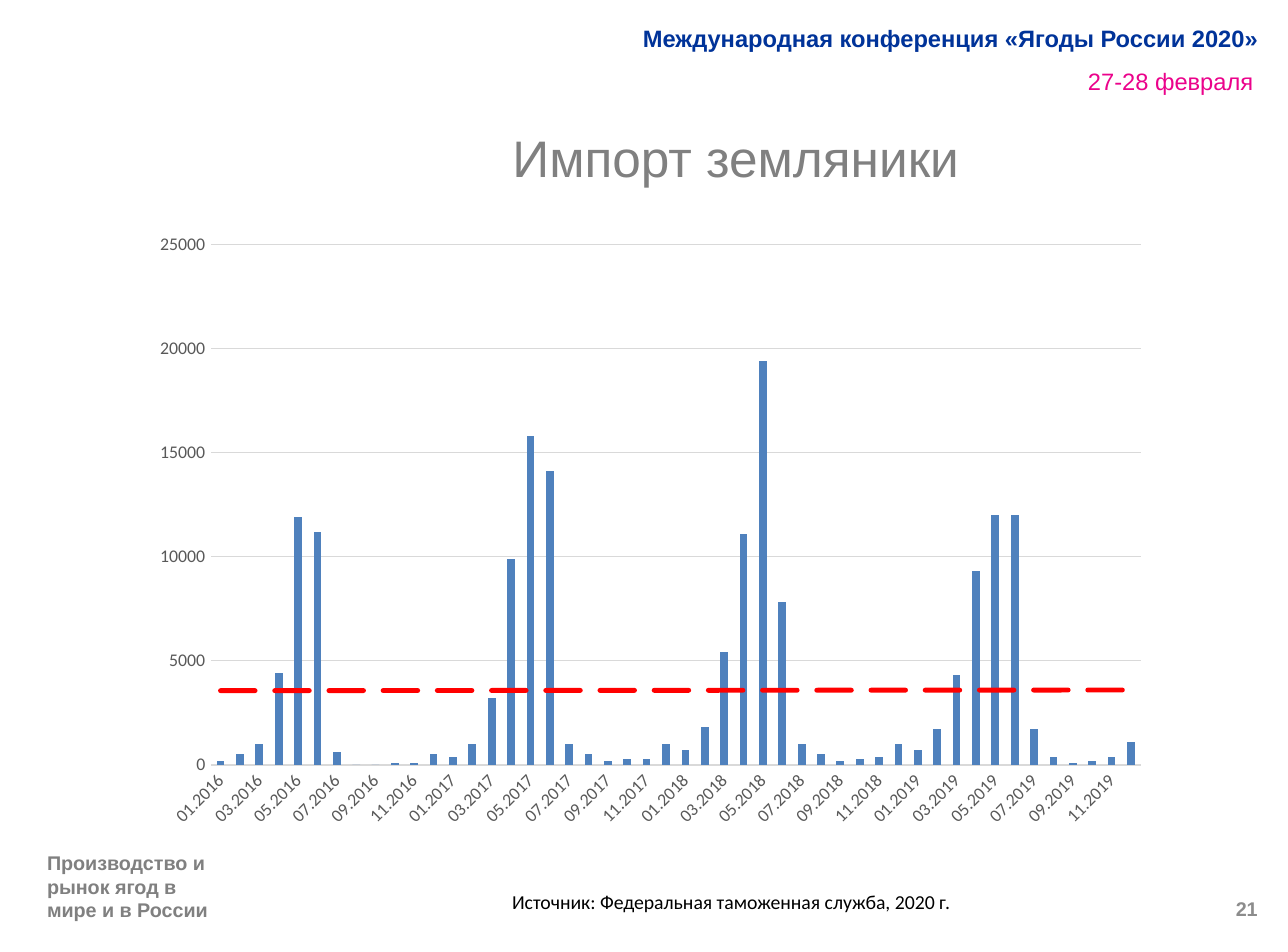
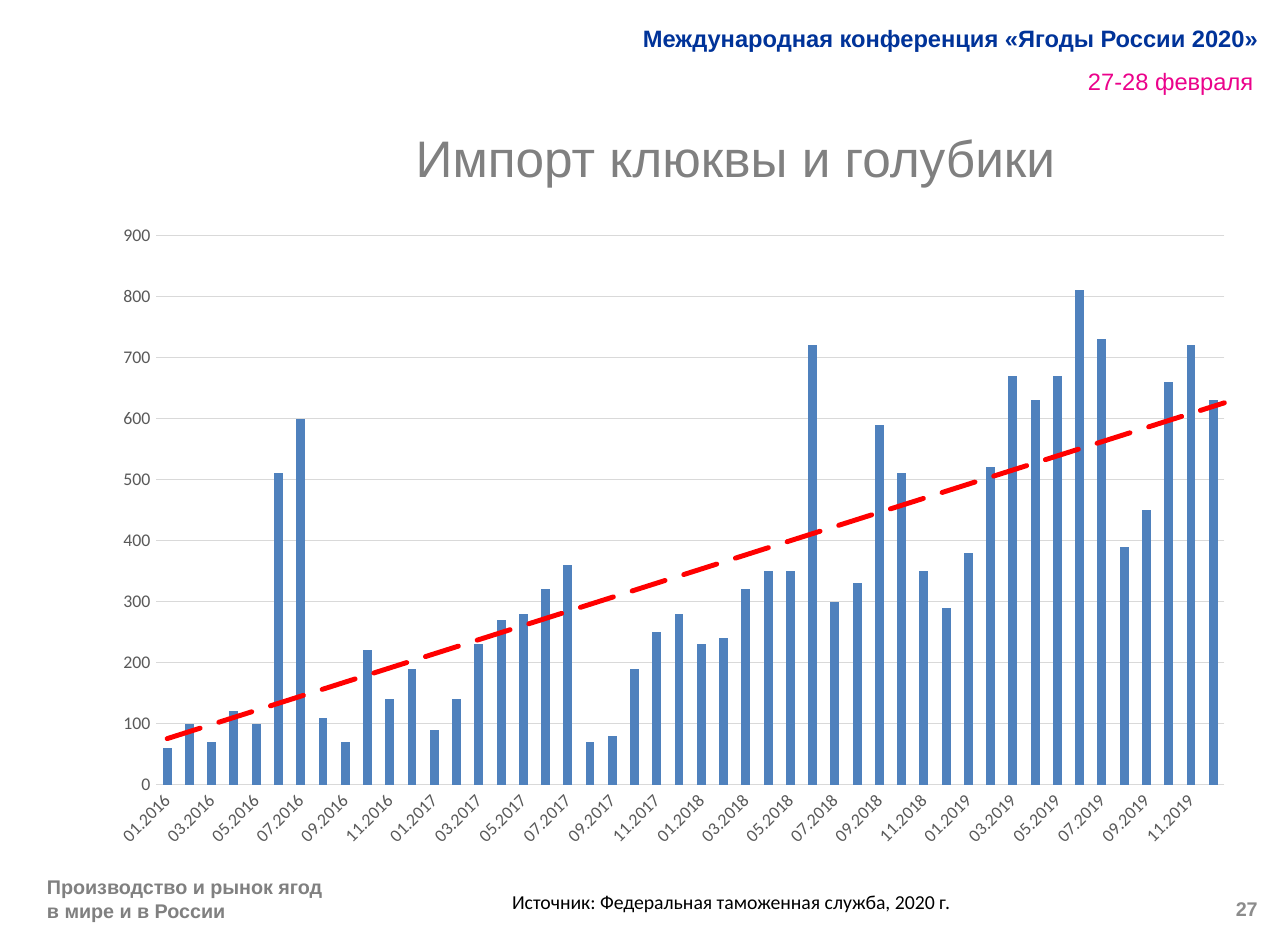
from dataclasses import dataclass

import pptx
import pptx.chart.axis
import pptx.chart.data
import pptx.dml.color
import pptx.dml.line
import pptx.enum.chart
import pptx.enum.text
import pptx.oxml
import pptx.oxml.ns
import pptx.slide
import pptx.util

WIDE, HIGH = pptx.util.Cm(23), pptx.util.Cm(17)

HUES = {
    "navy": "003399", "pink": "EB028B", "gray": "808080", "page": "8C8C8C",
    "ink": "000000", "axis": "595959", "grid": "D9D9D9", "bar": "4F81BD",
    "trend": "FF0000",
}
LEFT, MID, RIGHT = (pptx.enum.text.PP_ALIGN.LEFT, pptx.enum.text.PP_ALIGN.CENTER,
                    pptx.enum.text.PP_ALIGN.RIGHT)
TOP, CENTRE = pptx.enum.text.MSO_ANCHOR.TOP, pptx.enum.text.MSO_ANCHOR.MIDDLE

MONTHS = [f"{month:02}.{year}" for year in range(2016, 2020) for month in range(1, 13)]


@dataclass(frozen=True)
class Box:
    """Left, top, width and height in percent of the slide."""
    x: float
    y: float
    w: float
    h: float

    def place(self) -> list[int]:
        sides = ((self.x, WIDE), (self.y, HIGH), (self.w, WIDE), (self.h, HIGH))
        return [round(share * full / 100) for share, full in sides]


@dataclass(frozen=True)
class Style:
    size: float
    hue: str
    bold: bool = False
    face: str = "Arial"
    align: int = LEFT
    anchor: int = CENTRE
    inset: tuple[float, float] = (0.08, 0.04)
    pitch: float | None = None


@dataclass(frozen=True)
class Page:
    title: str
    number: int
    chart: Box
    topic: Box
    peak: int
    step: int
    data: list[int]


# Text styles
DATE = Style(12, "pink", align=RIGHT, anchor=TOP, pitch=20.4)
EVENT = Style(12, "navy", True, align=RIGHT)
TITLE = Style(26, "gray", align=MID)
COUNT = Style(10, "page", True, align=RIGHT)
TOPIC = Style(10, "gray", True)
SOURCE = Style(10, "ink", face="Calibri", anchor=TOP, inset=(0.1, 0.05))

# Texts that stand on every slide
FRAME = [
    ("27-28 февраля", Box(80.42, 5.23, 17.78, 5.53), DATE),
    ("Международная конференция «Ягоды России 2020»",
     Box(46.71, 1.05, 51.9, 5.83), EVENT),
    ("Источник: Федеральная таможенная служба, 2020 г.",
     Box(38.68, 92.7, 53.01, 4.03), SOURCE),
]
THEME = "Производство и рынок ягод в мире и в России"
TITLE_BOX = Box(16.12, 10.65, 82.05, 11.65)
COUNT_BOX = Box(75.22, 92.7, 23.3, 5.38)

PAGES = [
    Page("Импорт земляники", 21, Box(10.85, 23.28, 79.29, 64.84),
         Box(2.77, 87.72, 15.9, 10.76), 25000, 5000,
         [200, 500, 1000, 4400, 11900, 11200, 600, 0, 0, 100, 100, 500,
          400, 1000, 3200, 9900, 15800, 14100, 1000, 500, 200, 300, 300, 1000,
          700, 1800, 5400, 11100, 19400, 7800, 1000, 500, 200, 300, 400, 1000,
          700, 1700, 4300, 9300, 12000, 12000, 1700, 400, 100, 200, 400, 1100]),
    Page("Импорт клюквы и голубики", 27, Box(7.4, 22.29, 89.45, 67.98),
         Box(2.77, 90.33, 23.74, 8.07), 900, 100,
         [60, 100, 70, 120, 100, 510, 600, 110, 70, 220, 140, 190,
          90, 140, 230, 270, 280, 320, 360, 70, 80, 190, 250, 280,
          230, 240, 320, 350, 350, 720, 300, 330, 590, 510, 350, 290,
          380, 520, 670, 630, 670, 810, 730, 390, 450, 660, 720, 630]),
]


def paint(name: str) -> pptx.dml.color.RGBColor:
    return pptx.dml.color.RGBColor.from_string(HUES[name])


def apply(item: object, **form: object) -> None:
    for key, value in form.items():
        setattr(item, key, value)


def write(slide: pptx.slide.Slide, text: str, box: Box, style: Style) -> None:
    frame = slide.shapes.add_textbox(*box.place()).text_frame
    side, edge = map(pptx.util.Inches, style.inset)
    apply(frame, word_wrap=True, vertical_anchor=style.anchor, margin_left=side,
          margin_right=side, margin_top=edge, margin_bottom=edge)
    line = frame.paragraphs[0]
    line.alignment = style.align
    if style.pitch:
        line.line_spacing = pptx.util.Pt(style.pitch)
    run = line.add_run()
    run.text = text
    apply(run.font, size=pptx.util.Pt(style.size), bold=style.bold, name=style.face)
    run.font.color.rgb = paint(style.hue)


def trim(axis: pptx.chart.axis.CategoryAxis | pptx.chart.axis.ValueAxis) -> None:
    """Give an axis its labels and remove its ticks."""
    none = pptx.enum.chart.XL_TICK_MARK.NONE
    apply(axis, major_tick_mark=none, minor_tick_mark=none)
    font = axis.tick_labels.font
    apply(font, size=pptx.util.Pt(9), name="Calibri", bold=False)
    font.color.rgb = paint("axis")


def rule(line: pptx.dml.line.LineFormat) -> None:
    line.color.rgb = paint("grid")
    line.width = pptx.util.Pt(0.75)


def plot(slide: pptx.slide.Slide, page: Page) -> None:
    data = pptx.chart.data.CategoryChartData()
    data.categories = MONTHS
    data.add_series("Series 1", page.data)
    kind = pptx.enum.chart.XL_CHART_TYPE.COLUMN_CLUSTERED
    chart = slide.shapes.add_chart(kind, *page.chart.place(), data).chart
    apply(chart, has_legend=False, has_title=False)
    apply(chart.font, size=pptx.util.Pt(10), name="Calibri")
    chart.font.color.rgb = paint("ink")

    # Columns
    bars = chart.plots[0]
    apply(bars, gap_width=150, vary_by_categories=False)
    series = bars.series[0]
    series.format.fill.solid()
    series.format.fill.fore_color.rgb = paint("bar")

    # Axes
    months, scale = chart.category_axis, chart.value_axis
    for axis in (months, scale):
        trim(axis)
    rule(months.format.line)
    months._element.xpath("./c:txPr/a:bodyPr")[0].set("rot", "-2700000")
    apply(scale, minimum_scale=0, maximum_scale=page.peak, major_unit=page.step)
    scale.format.line.fill.background()
    rule(scale.major_gridlines.format.line)

    # Dashed trend line, half a month past the last column
    trend = pptx.oxml.parse_xml(
        f'<c:trendline {pptx.oxml.ns.nsdecls("c", "a")}><c:spPr>'
        f'<a:ln w="{pptx.util.Pt(2.5)}" cap="rnd"><a:solidFill>'
        f'<a:srgbClr val="{HUES["trend"]}"/></a:solidFill>'
        '<a:prstDash val="lgDash"/></a:ln></c:spPr>'
        '<c:trendlineType val="linear"/><c:forward val="0.5"/>'
        '<c:dispRSqr val="0"/><c:dispEq val="0"/></c:trendline>')
    series._element.xpath("./c:cat")[0].addprevious(trend)


def main() -> None:
    deck = pptx.Presentation()
    deck.slide_width = WIDE
    deck.slide_height = HIGH
    for page in PAGES:
        slide = deck.slides.add_slide(deck.slide_layouts[6])
        for text, box, style in FRAME:
            write(slide, text, box, style)
        write(slide, page.title, TITLE_BOX, TITLE)
        write(slide, str(page.number), COUNT_BOX, COUNT)
        plot(slide, page)
        write(slide, THEME, page.topic, TOPIC)
    deck.save("out.pptx")


if __name__ == "__main__":
    main()
